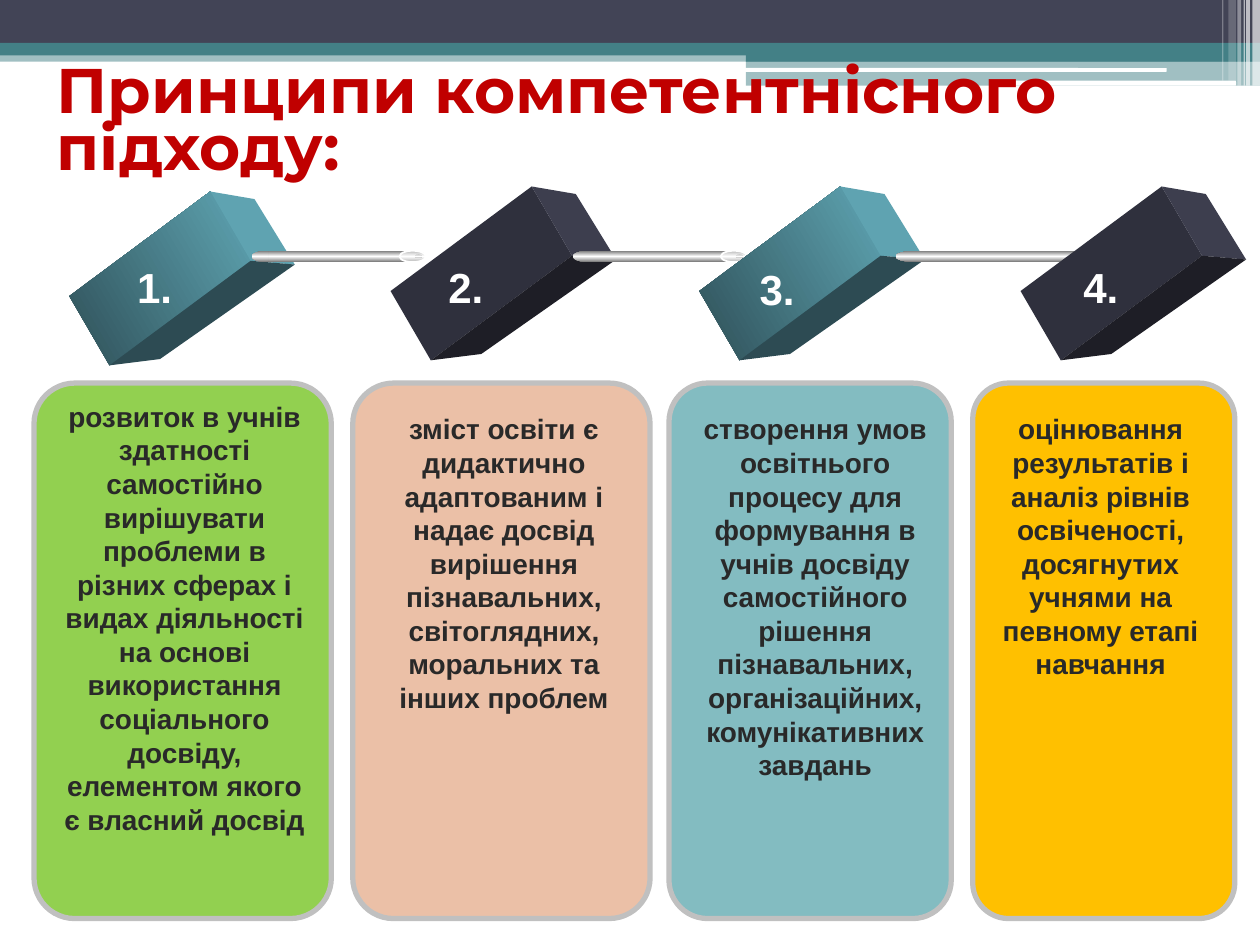
from copy import deepcopy
from dataclasses import dataclass

from pptx import Presentation
from pptx.dml.color import RGBColor
from pptx.enum import shapes, text
from pptx.oxml import ns, xmlchemy as x
from pptx.util import Inches, Pt

RECT = shapes.MSO_SHAPE.RECTANGLE
ROUND = shapes.MSO_SHAPE.ROUNDED_RECTANGLE
OVAL = shapes.MSO_SHAPE.OVAL


@dataclass(frozen=True)
class Theme:
    white: str = "FFFFFF"
    navy: str = "424456"
    teal: str = "438086"
    title: str = "C00000"
    body: str = "292929"
    border: str = "C0C0C0"
    rod: tuple = ("767676", "FFFFFF", "767676")
    tip: tuple = ("B6B6B6", "FFFFFF", "B6B6B6")
    teal_block: tuple = (("2F5058", "5FA5B3"), "5FA3B1", "2D4B53")
    navy_block: tuple = ("2F303D", "3D3E4E", "1E1E26")
    title_font: str = "Montserrat"
    body_font: str = "Arial"
    title_size: int = 36
    number_size: int = 24
    body_size: int = 16


T = Theme()

CARDS = [
    (0.27, 2.36, "92D050", (0.4, 3.12, 2.13, 3.6),
     "розвиток в учнів здатності самостійно вирішувати проблеми в різних сферах "
     "і видах діяльності на основі використання соціального досвіду, елементом "
     "якого є власний досвід"),
    (2.8, 2.36, "EBC0A7", (2.82, 3.22, 2.36, 2.52),
     "зміст освіти є дидактично адаптованим і надає досвід вирішення "
     "пізнавальних, світоглядних, моральних та інших проблем"),
    (5.31, 2.24, "83BCC1", (5.39, 3.22, 2.16, 3.06),
     "створення умов освітнього процесу для формування в учнів досвіду "
     "самостійного рішення пізнавальних, організаційних, комунікативних завдань"),
    (7.72, 2.08, "FFC000", (7.76, 3.22, 1.95, 2.26),
     "оцінювання результатів і аналіз рівнів освіченості, досягнутих учнями "
     "на певному етапі навчання"),
]

BLOCKS = [
    (0.55, 1.52, T.teal_block, 0.99, 2.03),
    (3.1, 1.48, T.navy_block, 3.46, 2.03),
    (5.55, 1.48, T.teal_block, 5.93, 2.04),
    (8.1, 1.48, T.navy_block, 8.5, 2.03),
]

RODS = [(2, 1.38), (4.55, 1.38), (7.11, 1.8)]

FACES = [
    [(0, 0.83), (1.12, 0), (1.44, 0.55), (0.32, 1.38)],
    [(1.12, 0), (1.47, 0.06), (1.79, 0.58), (1.44, 0.55)],
    [(0.32, 1.38), (1.44, 0.55), (1.79, 0.58), (0.72, 1.33)],
]


def paint(sp, color, alpha=100, angle=90, line=None, width=1):
    sp.shadow.inherit = False
    if isinstance(color, tuple):
        sp.fill.gradient()
        sp.fill.gradient_angle = angle
        stops = sp._element.spPr.find(".//" + ns.qn("a:gsLst"))
        for _ in color[2:]:
            stops.append(deepcopy(stops[0]))
        for i, (stop, c) in enumerate(zip(sp.fill.gradient_stops, color)):
            stop.position = i / (len(color) - 1)
            stop.color.rgb = RGBColor.from_string(c)
    else:
        sp.fill.solid()
        sp.fill.fore_color.rgb = RGBColor.from_string(color)
        if alpha < 100:
            clr = sp._element.spPr.find(".//" + ns.qn("a:srgbClr"))
            node = x.OxmlElement("a:alpha")
            node.set("val", str(alpha * 1000))
            clr.append(node)
    if line:
        sp.line.color.rgb = RGBColor.from_string(line)
        sp.line.width = Pt(width)
    else:
        sp.line.fill.background()


def add_box(s, kind, box, color, adj=None, **fmt):
    sp = s.shapes.add_shape(kind, *map(Inches, box))
    if adj is not None:
        sp.adjustments[0] = adj
    paint(sp, color, **fmt)
    return sp


def write(sp, words, size, color, font=T.body_font, align=None, wrap=True,
          anchor=text.MSO_ANCHOR.TOP, spacing=None):
    tf = sp.text_frame
    tf.word_wrap = wrap
    tf.auto_size = text.MSO_AUTO_SIZE.NONE
    tf.vertical_anchor = anchor
    p = tf.paragraphs[0]
    p.alignment = align
    p.line_spacing = spacing
    r = p.add_run()
    r.text = words
    r.font.size = Pt(size)
    r.font.name = font
    r.font.bold = True
    r.font.color.rgb = RGBColor.from_string(color)


def add_header(s, width):
    add_box(s, RECT, (0, 0.4, width, 0.09), T.teal, alpha=50)
    add_box(s, RECT, (0, 0, width, 0.34), T.navy)
    add_box(s, RECT, (0, 0.34, width, 0.1), T.teal)
    add_box(s, RECT, (5.92, 0.39, width - 5.92, 0.1), T.teal)
    add_box(s, RECT, (5.92, 0.48, width - 5.92, 0.2), T.teal, alpha=50)
    add_box(s, ROUND, (5.91, 0.54, 3.35, 0.03), T.white)
    add_box(s, ROUND, (8.06, 0.64, 1.75, 0.04), T.white)
    for left, w, h, alpha in [(9.94, 0.06, 0.68, 65), (9.89, 0.03, 0.68, 65),
                              (9.87, 0.01, 0.68, 60), (9.82, 0.03, 0.68, 40),
                              (9.75, 0.06, 0.64, 20), (9.7, 0.01, 0.64, 30)]:
        add_box(s, RECT, (left, 0, w, h), T.white, alpha=alpha)


def add_title(s, box):
    sp = s.shapes.title
    sp.left, sp.top, sp.width, sp.height = map(Inches, box)
    write(sp, "Принципи компетентнісного підходу:", T.title_size, T.title,
          font=T.title_font, align=text.PP_ALIGN.LEFT,
          anchor=text.MSO_ANCHOR.MIDDLE, spacing=0.75)
    s.shapes._spTree.append(sp._element)


def add_block(s, left, top, colors):
    for face, color in zip(FACES, colors):
        pts = [(Inches(left + dx), Inches(top + dy)) for dx, dy in face]
        fb = s.shapes.build_freeform(*pts[0])
        fb.add_line_segments(pts[1:])
        paint(fb.convert_to_shape(), color, angle=30)


def add_rod(s, left, width, top=1.99, height=0.09):
    k = width / 1.38
    add_box(s, OVAL, (left, top, 0.23 * k, height), T.rod)
    add_box(s, RECT, (left + 0.13 * k, top, 1.15 * k, height), T.rod)
    add_box(s, OVAL, (left + 1.17 * k, top, 0.21 * k, height), T.tip, line=T.white)
    add_box(s, OVAL, (left + 1.29 * k, top + 0.03, 0.06 * k, 0.03), T.tip)


def add_chain(s):
    for i, (left, top, colors, _, _) in enumerate(BLOCKS):
        add_block(s, left, top, colors)
        if i < len(RODS):
            add_rod(s, *RODS[i])
    for i, (_, _, _, left, top) in enumerate(BLOCKS, 1):
        sp = s.shapes.add_textbox(*map(Inches, (left, top, 0.58, 0.47)))
        write(sp, f"{i}.", T.number_size, T.white, wrap=False)


def add_card(s, box, color, words_box, words):
    add_box(s, ROUND, box, color, adj=0.137, line=T.border, width=3)
    sp = s.shapes.add_textbox(*map(Inches, words_box))
    write(sp, words, T.body_size, T.body, align=text.PP_ALIGN.CENTER)


def main():
    prs = Presentation()
    prs.slide_width, prs.slide_height = Inches(10), Inches(7.5)
    s = prs.slides.add_slide(prs.slide_layouts[5])
    add_header(s, 10)
    add_title(s, (0.35, 0.52, 8.9, 0.95))
    add_chain(s)
    for left, width, color, words_box, words in CARDS:
        add_card(s, (left, 3.04, width, 4.25), color, words_box, words)
    prs.save("out.pptx")


if __name__ == "__main__":
    main()
